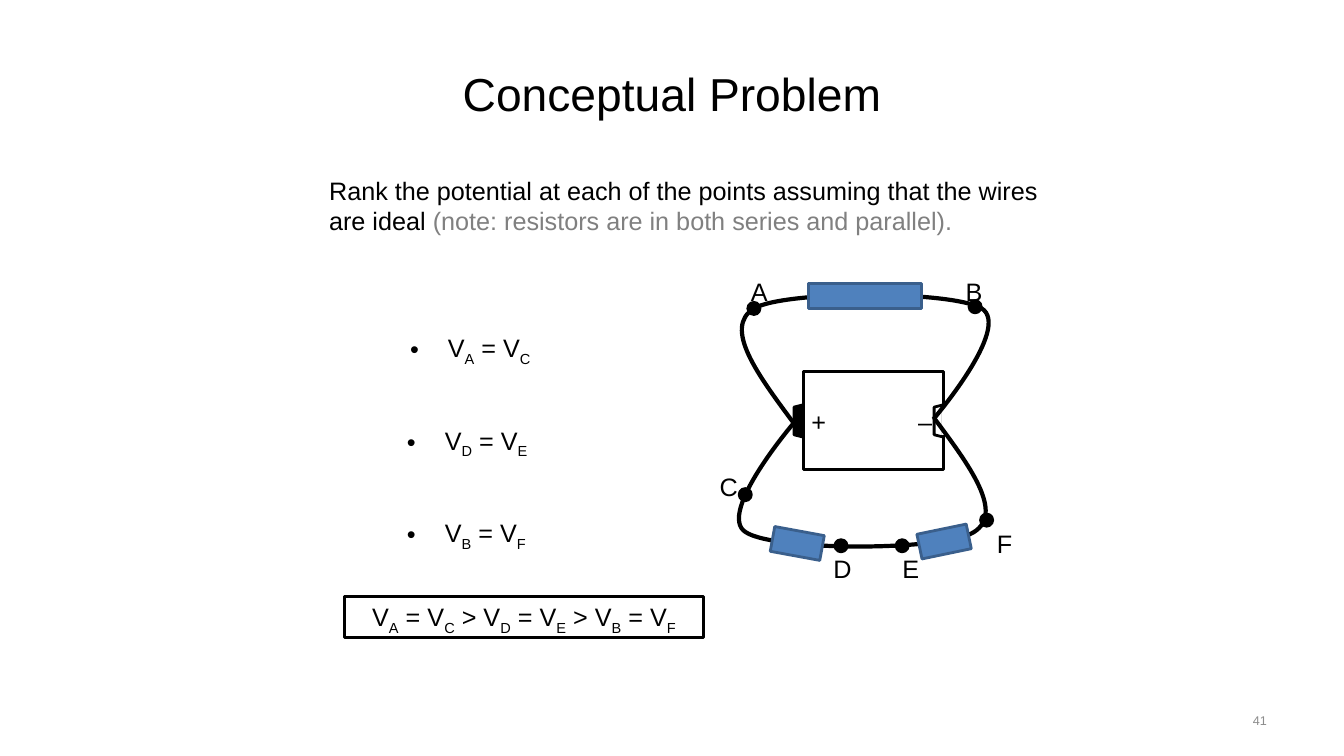
from lxml import etree
from pptx import Presentation
from pptx.dml.color import RGBColor
from pptx.enum.shapes import MSO_CONNECTOR, MSO_SHAPE
from pptx.enum.text import MSO_ANCHOR, MSO_AUTO_SIZE, PP_ALIGN
from pptx.oxml.ns import qn
from pptx.util import Pt

RECT, TRAPEZOID, OVAL = MSO_SHAPE.RECTANGLE, MSO_SHAPE.TRAPEZOID, MSO_SHAPE.OVAL
LEFT, CENTER, RIGHT = PP_ALIGN.LEFT, PP_ALIGN.CENTER, PP_ALIGN.RIGHT
TOP, MIDDLE = MSO_ANCHOR.TOP, MSO_ANCHOR.MIDDLE
COLORS = {"ink": "000000", "paper": "FFFFFF", "note": "808080",
          "number": "8C8C8C", "resistor": "4F81BD", "resistor_edge": "3A5F8C"}
LINE_H = 29.1
DOT = 8.64

EQUALITIES = ["V_A = V_C", "V_D = V_E", "V_B = V_F"]
ANSWER = "V_A = V_C > V_D = V_E > V_B = V_F"

# name: (label left, label top, dot left, dot top)
POINTS = {
    "A": (529.2, 193.7, 534.2, 216),
    "B": (682.6, 193.7, 692.2, 214.8),
    "C": (506.9, 333.4, 528, 349),
    "D": (588.2, 391.7, 596.4, 385.5),
    "E": (637.5, 391.7, 640.1, 385.5),
    "F": (704.9, 373.7, 700.4, 367.2),
}
# start point, then cubic segments of two controls and an end
UPPER_WIRE = [(566.6, 301.7),
              (541.4, 267.8), (516.2, 234), (538.6, 220.3),
              (560.9, 207.4), (679.7, 207.4), (701.3, 220.3),
              (722.9, 234), (666.7, 299.5), (666.7, 299.5)]
LOWER_WIRE = [(667.4, 298.8),
              (692.6, 332.6), (717.8, 366.5), (695.5, 380.2),
              (673.2, 393.8), (553.7, 393.8), (532.8, 380.2),
              (511.2, 367.2), (567.4, 301.7), (567.4, 301.7)]
# left, top, width, rotation
RESISTORS = [(577.4, 202.3, 80.6, 0), (551.5, 379.2, 36, 10.4),
             (656.4, 377.8, 36, 348.3)]


def rgb(name):
    return RGBColor.from_string(COLORS[name])


def place(sp, left, top, width, height):
    sp.left, sp.top, sp.width, sp.height = Pt(left), Pt(top), Pt(width), Pt(height)


def setup_text(sp, anchor=TOP):
    tf = sp.text_frame
    tf.word_wrap = True
    tf.auto_size = MSO_AUTO_SIZE.NONE
    tf.vertical_anchor = anchor
    return tf


def add_run(p, text, size=18, color="ink"):
    r = p.add_run()
    r.text = text
    r.font.name = "Arial"
    r.font.size = Pt(size)
    r.font.color.rgb = rgb(color)
    return r


def add_potentials(p, text):
    """Add runs in which the letter after each underscore is a subscript."""
    first, *rest = text.split("_")
    add_run(p, first)
    for part in rest:
        sub = add_run(p, part[0])
        sub.font._element.set("baseline", "-25000")
        if part[1:]:
            add_run(p, part[1:])


def add_text(slide, box, runs, align=LEFT, anchor=TOP):
    sp = slide.shapes.add_textbox(*map(Pt, box))
    p = setup_text(sp, anchor).paragraphs[0]
    p.alignment = align
    for run in runs:
        add_run(p, *run)


def add_box(slide, kind, box, fill=None, line="ink", rotation=0):
    sp = slide.shapes.add_shape(kind, *map(Pt, box))
    sp.shadow.inherit = False
    sp.rotation = rotation
    if fill:
        sp.fill.solid()
        sp.fill.fore_color.rgb = rgb(fill)
    else:
        sp.fill.background()
    sp.line.color.rgb = rgb(line)
    sp.line.width = Pt(2)
    return sp


def add_wire(slide, nodes):
    """Lay out the nodes as an outline, then join each three into a curve."""
    points = [(Pt(x), Pt(y)) for x, y in nodes]
    builder = slide.shapes.build_freeform(*points[0])
    builder.add_line_segments(points[1:], close=False)
    sp = builder.convert_to_shape()
    sp.shadow.inherit = False
    sp.fill.background()
    sp.line.color.rgb = rgb("ink")
    sp.line.width = Pt(3)
    outline = next(sp._element.iter(qn("a:path")))
    lines = outline.findall(qn("a:lnTo"))
    for i in range(0, len(lines), 3):
        curve = etree.SubElement(outline, qn("a:cubicBezTo"))
        for line in lines[i:i + 3]:
            curve.append(line[0])
            outline.remove(line)


def add_battery(slide):
    add_box(slide, RECT, (573.8, 265.4, 100.1, 70))
    add_box(slide, TRAPEZOID, (659, 297.4, 23, 6.5), rotation=270)
    gap = slide.shapes.add_connector(MSO_CONNECTOR.STRAIGHT,
                                     Pt(674.1), Pt(311), Pt(674.1), Pt(289.4))
    gap.line.color.rgb = rgb("paper")
    gap.line.width = Pt(2)
    etree.SubElement(gap._element.spPr, qn("a:effectLst"))
    add_box(slide, TRAPEZOID, (558.9, 297.4, 23, 6.5), "ink", rotation=270)
    for sign, left in (("+", 572.4), ("–", 648.7)):
        add_text(slide, (left, 286.6, 18, LINE_H), [(sign,)], CENTER)


def add_circuit(slide):
    add_battery(slide)
    for nodes in (UPPER_WIRE, LOWER_WIRE):
        add_wire(slide, nodes)
    for left, top, width, rotation in RESISTORS:
        add_box(slide, RECT, (left, top, width, 18), "resistor", "resistor_edge", rotation)
    for name, (label_x, label_y, dot_x, dot_y) in POINTS.items():
        add_text(slide, (label_x, label_y, 18, LINE_H), [(name,)], CENTER)
        add_box(slide, OVAL, (dot_x, dot_y, DOT, DOT), "ink")


def fill_title(sp):
    place(sp, 48, 21.6, 864, 90)
    p = setup_text(sp, MIDDLE).paragraphs[0]
    p.alignment = CENTER
    add_run(p, "Conceptual Problem", 33)


def fill_equalities(sp):
    place(sp, 283.5, 234, 122.4, 160.8)
    tf = setup_text(sp)
    for i, text in enumerate(EQUALITIES):
        p = tf.add_paragraph() if i else tf.paragraphs[0]
        p.space_before = Pt(41.5 if i else 0)
        pPr = p._p.get_or_add_pPr()
        pPr.set("marL", str(Pt(27 if i else 29.2)))
        pPr.set("indent", str(-Pt(27)))
        add_potentials(p, text)


def add_answer(slide):
    sp = add_box(slide, RECT, (246.2, 426.2, 256.3, LINE_H), "paper")
    p = setup_text(sp).paragraphs[0]
    p.alignment = CENTER
    add_potentials(p, ANSWER)


def main():
    prs = Presentation()
    prs.slide_width, prs.slide_height = Pt(960), Pt(540)
    slide = prs.slides.add_slide(prs.slide_layouts[1])
    fill_title(slide.shapes.title)
    fill_equalities(slide.placeholders[1])
    add_text(slide, (228, 121.7, 534.2, 51.1), [
        ("Rank the potential at each of the points assuming that the wires are ideal ",),
        ("(note: resistors are in both series and parallel).", 18, "note")])
    add_answer(slide)
    add_circuit(slide)
    add_text(slide, (688.1, 500.2, 223.9, LINE_H), [("41", 9, "number")], RIGHT, MIDDLE)
    prs.save("out.pptx")


if __name__ == "__main__":
    main()
